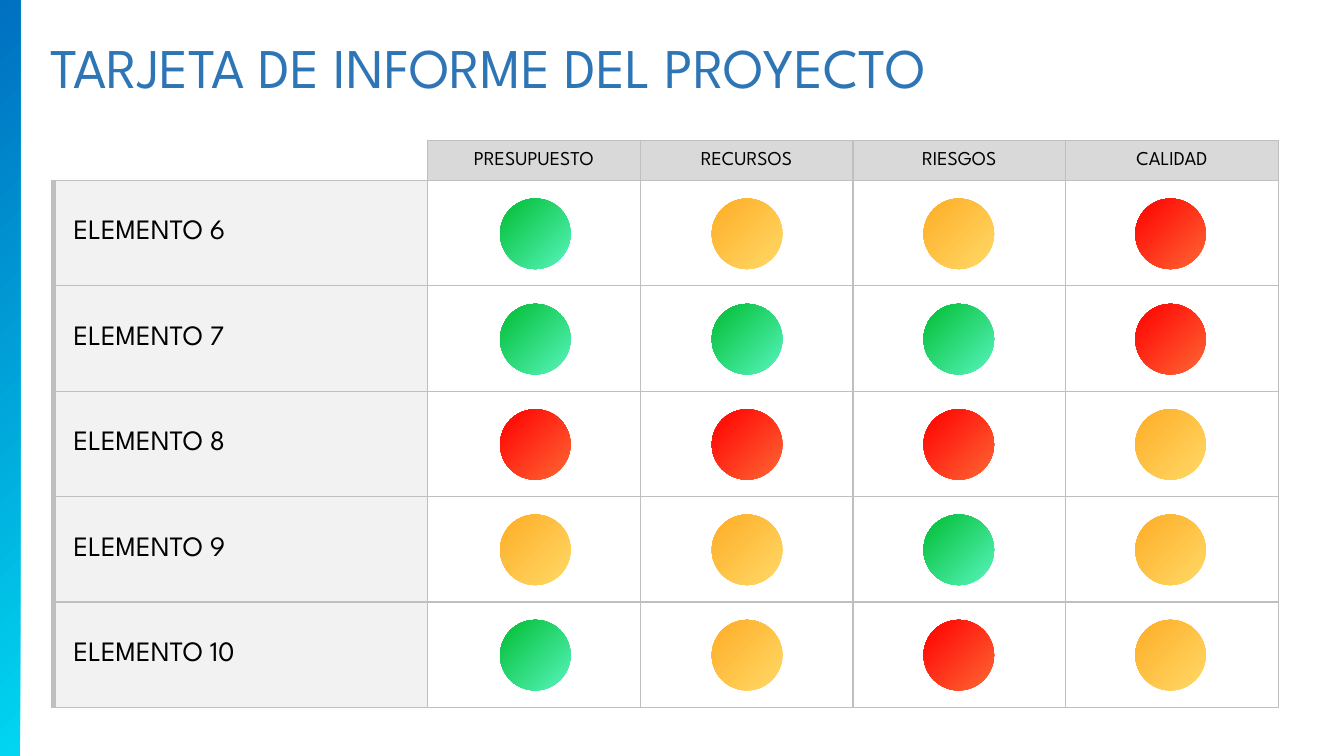
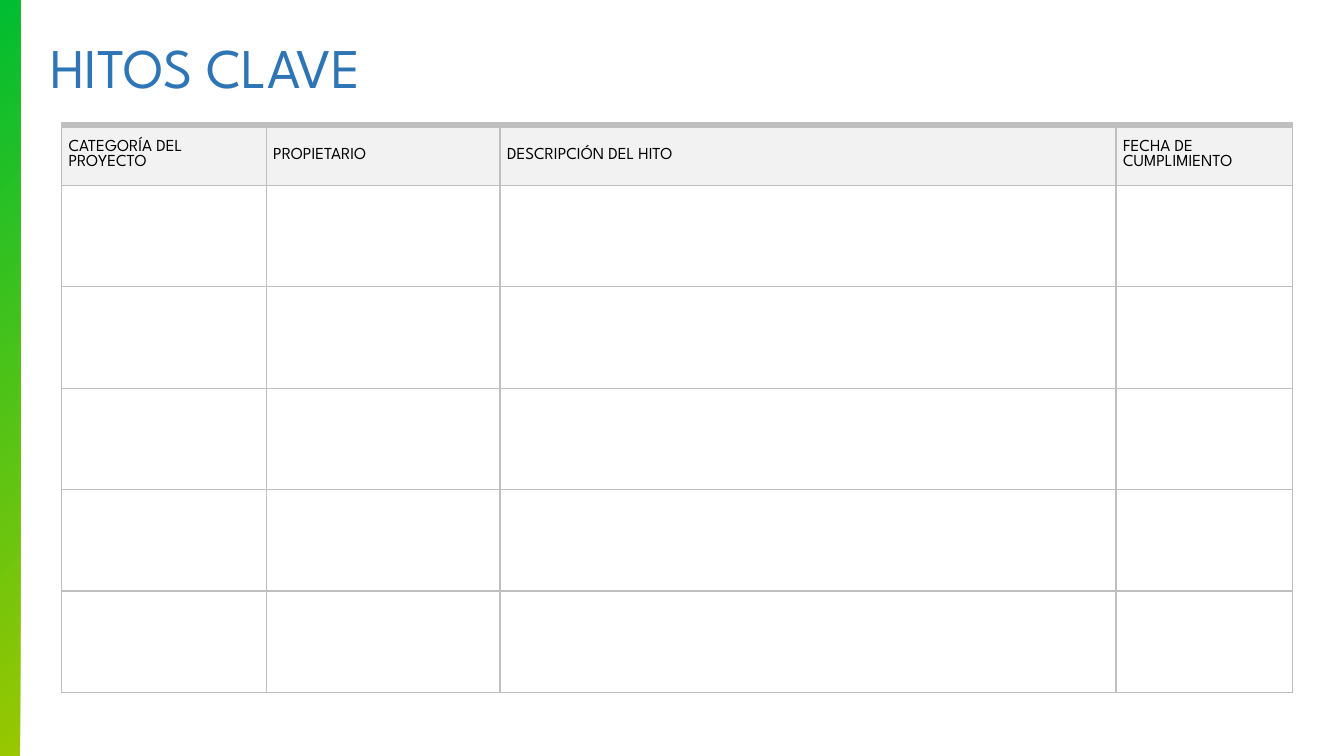
from dataclasses import dataclass

from lxml import etree
from pptx import Presentation
from pptx.dml.color import RGBColor
from pptx.enum import shapes, text
from pptx.oxml import ns
from pptx.util import Inches, Pt

FONT = "League Spartan"
TITLE, BLACK, WHITE = "2E75B6", "000000", "FFFFFF"
BORDER, HEADER, LABEL = "BFBFBF", "D9D9D9", "F2F2F2"
THIN, THICK = 1, 4.5
TABLE_HEIGHT = 5.63
SIDES = ("L", "R", "T", "B")


@dataclass(frozen=True)
class Gradient:
    """Colours from the bottom-right corner to the top-left one."""
    start: str
    end: str


BLUE_BAND = Gradient("00D6F1", "0070C0")
GREEN_BAND = Gradient("9AC700", "00BD32")
STATUS = {
    "G": Gradient("58F5BE", "00BD32"),
    "Y": Gradient("FFD966", "FEAD27"),
    "R": Gradient("FE6735", "FF0000"),
}


@dataclass(frozen=True)
class CellStyle:
    fill: str | None = WHITE
    size: float = 12
    align: text.PP_ALIGN = text.PP_ALIGN.LEFT
    inset_left: float = 0.07
    inset_right: float = 0.07
    borders: tuple[float, ...] = (THIN,) * 4  # in the order of SIDES


BODY = CellStyle()
CORNER = CellStyle(fill=None, borders=(0, THIN, 0, THIN))
CRITERION = CellStyle(HEADER, 14, text.PP_ALIGN.CENTER, 0.06, 0.06)
ELEMENT = CellStyle(LABEL, 20, inset_left=0.2, inset_right=0.06,
                    borders=(THICK, THIN, THIN, THIN))
MILESTONE = CellStyle(LABEL, borders=(THIN, THIN, THICK, THIN))


def rgb(color: str) -> RGBColor:
    return RGBColor.from_string(color)


def style_font(p, size: float, color: str) -> None:
    p.font.name = FONT
    p.font.size = Pt(size)
    p.font.color.rgb = rgb(color)


def add_gradient_shape(slide, kind, left: float, top: float, width: float,
                       height: float, gradient: Gradient) -> None:
    sp = slide.shapes.add_shape(kind, Inches(left), Inches(top),
                                Inches(width), Inches(height))
    sp.shadow.inherit = False
    sp.line.fill.background()
    sp.fill.gradient()
    sp.fill.gradient_angle = 135
    for stop, color in zip(sp.fill.gradient_stops, (gradient.start, gradient.end)):
        stop.color.rgb = rgb(color)
    sp.fill.gradient_stops[0].position = 0
    sp.fill.gradient_stops[1].position = 1


def add_titled_slide(prs, title: str, title_width: float, band: Gradient):
    slide = prs.slides.add_slide(prs.slide_layouts[6])
    box = slide.shapes.add_textbox(Inches(0.4), Inches(0.27),
                                   Inches(title_width), Inches(0.77))
    tf = box.text_frame
    tf.word_wrap = True
    tf.auto_size = text.MSO_AUTO_SIZE.SHAPE_TO_FIT_TEXT
    tf.text = title
    style_font(tf.paragraphs[0], 40, TITLE)
    add_gradient_shape(slide, shapes.MSO_SHAPE.RECTANGLE, 0, 0, 0.2, 7.5, band)
    return slide


def set_borders(cell, widths: tuple[float, ...]) -> None:
    """Draw the four sides; a width of zero hides a side."""
    tc_pr = cell._tc.get_or_add_tcPr()
    for i, (side, width) in enumerate(zip(SIDES, widths)):
        ln = etree.Element(ns.qn(f"a:ln{side}"), w=str(int(Pt(width))))
        if width:
            fill = etree.SubElement(ln, ns.qn("a:solidFill"))
            etree.SubElement(fill, ns.qn("a:srgbClr"), val=BORDER)
        else:
            etree.SubElement(ln, ns.qn("a:noFill"))
        tc_pr.insert(i, ln)


def fill_cell(cell, words: str, style: CellStyle) -> None:
    cell.text = words
    cell.vertical_anchor = text.MSO_ANCHOR.MIDDLE
    cell.margin_left, cell.margin_right = Inches(style.inset_left), Inches(style.inset_right)
    cell.margin_top = cell.margin_bottom = 0
    p = cell.text_frame.paragraphs[0]
    p.alignment = style.align
    style_font(p, style.size, BLACK)
    if style.fill:
        cell.fill.solid()
        cell.fill.fore_color.rgb = rgb(style.fill)
    else:
        cell.fill.background()
    set_borders(cell, style.borders)


def add_grid(slide, left: float, top: float, widths: list[float], header_height: float,
             rows: list[list[tuple[str, CellStyle]]]) -> None:
    """Add a table whose rows below the header share the remaining height."""
    frame = slide.shapes.add_table(len(rows), len(widths), Inches(left), Inches(top),
                                   Inches(sum(widths)), Inches(TABLE_HEIGHT))
    table = frame.table
    table.first_row = table.horz_banding = False
    for column, width in zip(table.columns, widths):
        column.width = Inches(width)
    body_height = (TABLE_HEIGHT - header_height) / (len(rows) - 1)
    for i, row in enumerate(rows):
        table.rows[i].height = Inches(body_height if i else header_height)
        for j, (words, style) in enumerate(row):
            fill_cell(table.cell(i, j), words, style)


def add_report_card(prs) -> None:
    slide = add_titled_slide(prs, "TARJETA DE INFORME DEL PROYECTO", 11.15, BLUE_BAND)
    criteria = ("PRESUPUESTO", "RECURSOS", "RIESGOS", "CALIDAD")
    ratings = {6: "GYYR", 7: "GGGR", 8: "RRRY", 9: "YYGY", 10: "GYRY"}
    rows = [[("", CORNER)] + [(name, CRITERION) for name in criteria]]
    rows += [[(f"ELEMENTO {n}", ELEMENT)] + [("", BODY)] * len(criteria) for n in ratings]
    add_grid(slide, 0.53, 1.39, [3.71] + [2.11] * len(criteria), 0.4, rows)
    for i, marks in enumerate(ratings.values()):
        for j, mark in enumerate(marks):
            add_gradient_shape(slide, shapes.MSO_SHAPE.OVAL, 4.96 + 2.1 * j,
                               1.97 + 4.18 / 4 * i, 0.7, 0.7, STATUS[mark])


def add_milestones(prs) -> None:
    slide = add_titled_slide(prs, "HITOS CLAVE", 6.41, GREEN_BAND)
    headings = ("CATEGORÍA DEL PROYECTO", "PROPIETARIO",
                "DESCRIPCIÓN DEL HITO", "FECHA DE CUMPLIMIENTO")
    rows = [[(name, MILESTONE) for name in headings]]
    rows += [[("", BODY)] * len(headings)] * 5
    add_grid(slide, 0.61, 1.24, [2.03, 2.32, 6.11, 1.75], 0.6, rows)


def main() -> None:
    prs = Presentation()
    prs.slide_width, prs.slide_height = Inches(13.33), Inches(7.5)
    add_report_card(prs)
    add_milestones(prs)
    prs.save("out.pptx")


if __name__ == "__main__":
    main()
